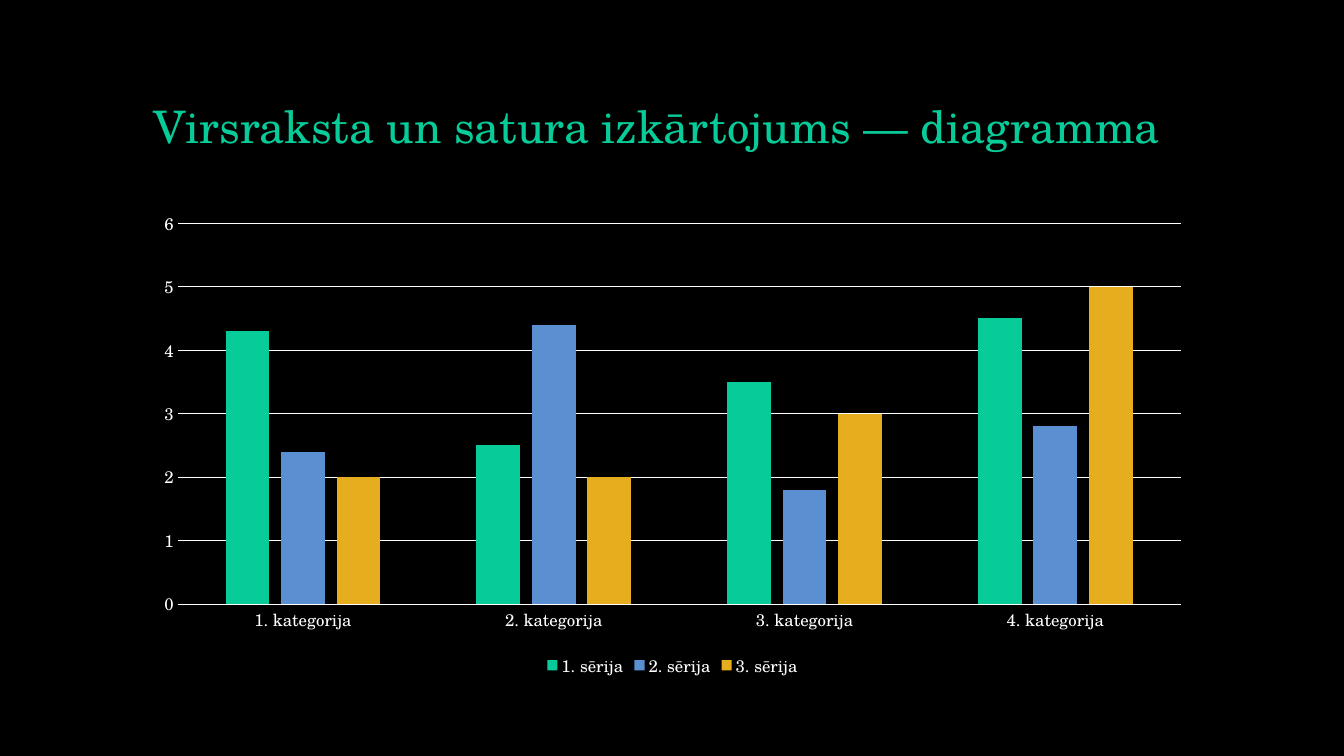
from dataclasses import dataclass

from pptx import Presentation
from pptx import util as u
from pptx.chart.data import CategoryChartData
from pptx.dml.color import RGBColor
from pptx.enum import chart as c
from pptx.enum import text

FONT = "TeX Gyre Schola"
BLACK, WHITE, GREEN, BLUE, GOLD = "000000", "FFFFFF", "07CB98", "5A90D1", "E6AD1E"
LEFT, WIDTH = u.Inches(1.42), u.Inches(10.5)


@dataclass
class Series:
    name: str
    values: tuple[float, ...]
    color: str


CATEGORIES = [f"{number}. kategorija" for number in range(1, 5)]
SERIES = [
    Series("1. sērija", (4.3, 2.5, 3.5, 4.5), GREEN),
    Series("2. sērija", (2.4, 4.4, 1.8, 2.8), BLUE),
    Series("3. sērija", (2, 2, 3, 5), GOLD),
]


def set_fill(fill, color: str) -> None:
    fill.solid()
    fill.fore_color.rgb = RGBColor.from_string(color)


def set_font(font, size: float, color: str) -> None:
    font.name = FONT
    font.size = u.Pt(size)
    font.bold = False
    font.color.rgb = RGBColor.from_string(color)


def set_line(line, color: str) -> None:
    set_fill(line.fill, color)
    line.width = u.Pt(0.75)


def add_title(slide, title: str) -> None:
    shape = slide.shapes.add_textbox(LEFT, u.Inches(0.4), WIDTH, u.Inches(1.17))
    frame = shape.text_frame
    frame.text = title
    frame.word_wrap = True
    frame.vertical_anchor = text.MSO_ANCHOR.BOTTOM
    paragraph = frame.paragraphs[0]
    paragraph.line_spacing = 0.9
    set_font(paragraph.runs[0].font, 32, GREEN)


def add_column_chart(slide, categories: list[str], series: list[Series]) -> None:
    data = CategoryChartData(number_format="General")
    data.categories = categories
    for item in series:
        data.add_series(item.name, item.values)
    chart = slide.shapes.add_chart(
        c.XL_CHART_TYPE.COLUMN_CLUSTERED, LEFT, u.Inches(2), WIDTH, u.Inches(4.76), data
    ).chart
    chart.has_title = False
    set_font(chart.font, 10, WHITE)

    # Columns
    plot = chart.plots[0]
    plot.gap_width = 219
    plot.overlap = -27
    plot.vary_by_categories = False
    for columns, item in zip(plot.series, series):
        set_fill(columns.format.fill, item.color)
        columns.invert_if_negative = False

    # Axes
    for axis in (chart.category_axis, chart.value_axis):
        axis.major_tick_mark = axis.minor_tick_mark = c.XL_TICK_MARK.NONE
        set_font(axis.tick_labels.font, 12, WHITE)
    set_line(chart.category_axis.format.line, WHITE)
    value_axis = chart.value_axis
    value_axis.format.line.fill.background()
    value_axis.minimum_scale, value_axis.maximum_scale = 0, 6
    value_axis.major_unit = 1
    value_axis.has_major_gridlines = True
    set_line(value_axis.major_gridlines.format.line, WHITE)

    # Legend
    chart.has_legend = True
    chart.legend.position = c.XL_LEGEND_POSITION.BOTTOM
    chart.legend.include_in_layout = False
    set_font(chart.legend.font, 12, WHITE)


def main() -> None:
    presentation = Presentation()
    presentation.slide_width = u.Inches(13.33)
    presentation.slide_height = u.Inches(7.5)
    slide = presentation.slides.add_slide(presentation.slide_layouts[6])
    set_fill(slide.background.fill, BLACK)
    add_title(slide, "Virsraksta un satura izkārtojums — diagramma")
    add_column_chart(slide, CATEGORIES, SERIES)
    presentation.save("out.pptx")


if __name__ == "__main__":
    main()
